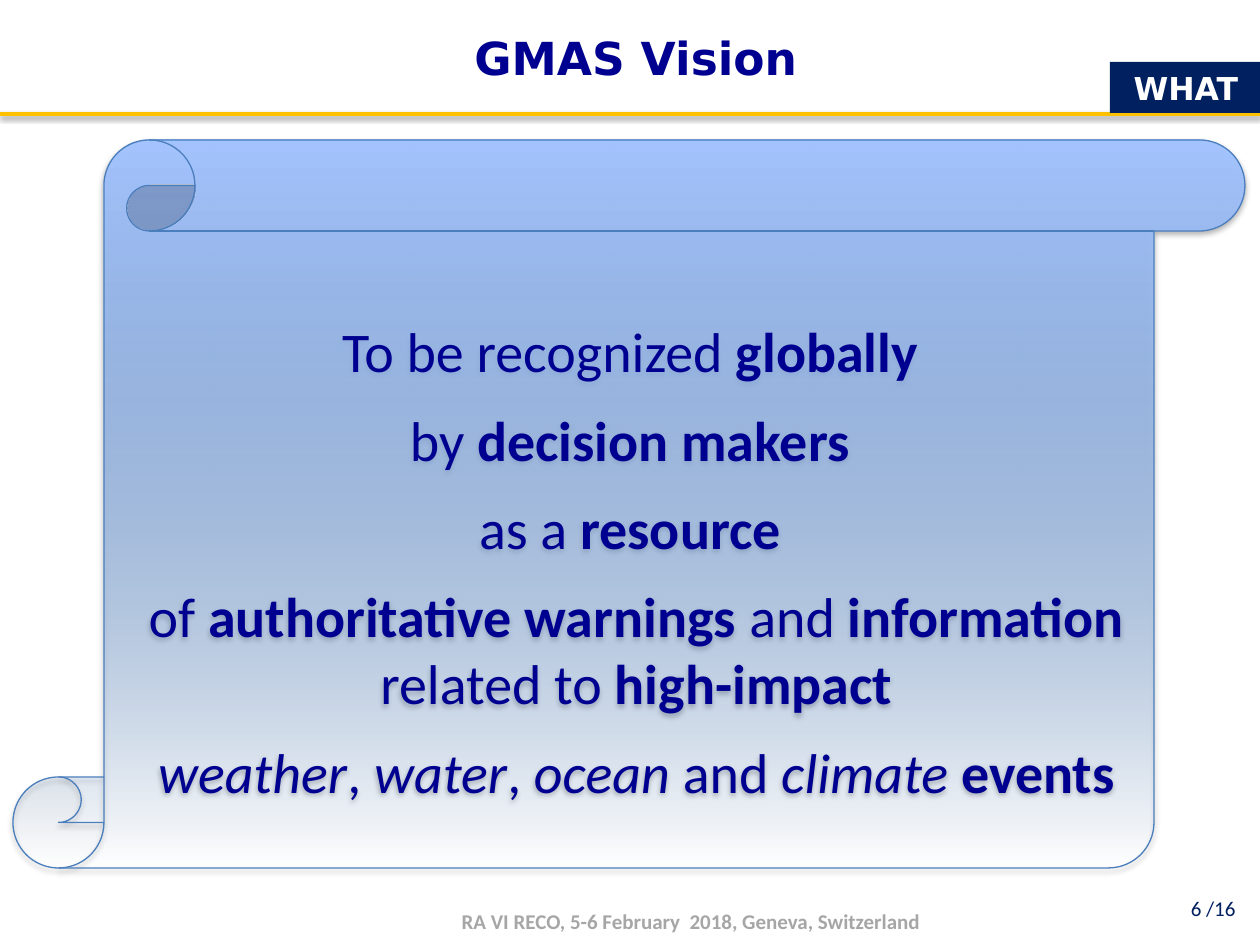
from dataclasses import dataclass

from lxml import etree
from pptx import Presentation
from pptx import util as u
from pptx.dml.color import RGBColor
from pptx.enum import shapes, text
from pptx.oxml.ns import qn


@dataclass(frozen=True)
class Theme:
    navy: str = "000090"
    dark: str = "002060"
    gold: str = "FFC000"
    grey: str = "A6A6A6"
    white: str = "FFFFFF"
    scroll_top: str = "A4C4FF"
    scroll_bottom: str = "3F80CE"
    scroll_edge: str = "4B7EBC"
    heading_font: str = "DejaVu Sans"
    body_font: str = "Calibri"
    title_size: float = 26
    vision_size: float = 32
    tag_size: float = 18
    footer_size: float = 12


THEME = Theme()
PLAIN, BOLD, ITALIC = "plain", "bold", "italic"
VISION = [
    [("To be recognized ", PLAIN), ("globally ", BOLD)],
    [("by ", PLAIN), ("decision makers ", BOLD)],
    [("as a ", PLAIN), ("resource ", BOLD)],
    [("of ", PLAIN), ("authoritative warnings ", BOLD), ("and ", PLAIN),
     ("information", BOLD), (" related to ", PLAIN), ("high-impact", BOLD)],
    [("weather", ITALIC), (", ", PLAIN), ("water", ITALIC), (", ", PLAIN),
     ("ocean", ITALIC), (" and ", PLAIN), ("climate ", ITALIC), ("events", BOLD)],
]


def px(length):
    return u.Emu(round(length * 914400 / 126))


def rgb(value):
    return RGBColor.from_string(value)


def style_font(font, name, size, color, bold=None):
    font.name, font.size, font.bold = name, u.Pt(size), bold
    font.color.rgb = rgb(color)


def write_line(frame, words, name, size, color, bold=None, align=text.PP_ALIGN.CENTER):
    frame.word_wrap = True
    frame.vertical_anchor = text.MSO_ANCHOR.MIDDLE
    para = frame.paragraphs[0]
    para.text, para.alignment = words, align
    style_font(para.font, name, size, color, bold)


def add_label(page, at, *args, **kwargs):
    box = page.shapes.add_textbox(*map(px, at))
    write_line(box.text_frame, *args, **kwargs)


def add_shadow(shape, opacity, blur, distance):
    """Give the shape a black shadow that falls straight down; lengths in points."""
    properties = shape._element.spPr
    effects = properties.find(qn("a:effectLst"))
    if effects is None:
        effects = etree.SubElement(properties, qn("a:effectLst"))
    shadow = etree.SubElement(
        effects, qn("a:outerShdw"), blurRad=str(u.Pt(blur)), dist=str(u.Pt(distance)),
        dir="5400000", algn="ctr", rotWithShape="0")
    color = etree.SubElement(shadow, qn("a:srgbClr"), val="000000")
    etree.SubElement(color, qn("a:alpha"), val=str(opacity * 1000))


def add_rule(page):
    rule = page.shapes.add_connector(
        shapes.MSO_CONNECTOR.STRAIGHT, 0, px(114), px(1260), px(114))
    rule.line.color.rgb = rgb(THEME.gold)
    rule.line.width = u.Pt(2)
    add_shadow(rule, 38, 3.1, 1.6)


def add_tag(page):
    tag = page.shapes.add_shape(
        shapes.MSO_SHAPE.RECTANGLE, *map(px, (1110, 62, 152, 51)))
    tag.shadow.inherit = False
    tag.fill.solid()
    tag.fill.fore_color.rgb = rgb(THEME.dark)
    tag.line.fill.background()
    write_line(tag.text_frame, "WHAT", THEME.heading_font, THEME.tag_size,
               THEME.white, bold=True)


def fade_fill(shape):
    """Fill from the solid top colour to a fully transparent bottom."""
    shape.fill.gradient()
    shape.fill.gradient_angle = 90
    bottom, top = shape.fill.gradient_stops
    bottom.color.rgb, top.color.rgb = rgb(THEME.scroll_bottom), rgb(THEME.scroll_top)
    color = next(shape._element.spPr.iter(qn("a:srgbClr")))
    etree.SubElement(color, qn("a:alpha"), val="0")


def add_scroll(page):
    scroll = page.shapes.add_shape(
        shapes.MSO_SHAPE.VERTICAL_SCROLL, *map(px, (13, 140, 1232, 728)))
    scroll.shadow.inherit = False
    fade_fill(scroll)
    scroll.line.color.rgb = rgb(THEME.scroll_edge)
    scroll.line.width = u.Pt(0.75)
    add_shadow(scroll, 35, 3.1, 1.8)

    frame = scroll.text_frame
    frame.word_wrap = True
    frame.vertical_anchor = text.MSO_ANCHOR.MIDDLE
    frame.margin_top = px(74)
    for index, line in enumerate(VISION):
        para = frame.add_paragraph() if index else frame.paragraphs[0]
        para.alignment = text.PP_ALIGN.CENTER
        para.space_before = u.Pt(12 if index else 0)
        properties = para._p.get_or_add_pPr()
        properties.set("marL", str(px(15)))
        properties.set("indent", "0")
        style_font(para.font, THEME.body_font, THEME.vision_size, THEME.navy)
        for words, style in line:
            span = para.add_run()
            span.text = words
            span.font.bold = style == BOLD
            span.font.italic = style == ITALIC


def main():
    deck = Presentation()
    deck.slide_width, deck.slide_height = px(1260), px(945)
    page = deck.slides.add_slide(deck.slide_layouts[6])
    add_label(page, (102, 19, 1068, 76), "GMAS Vision", THEME.heading_font,
              THEME.title_size, THEME.navy, bold=True)
    add_rule(page)
    add_scroll(page)
    add_label(page, (1172, 883, 76, 50), "6 /16", THEME.body_font,
              THEME.footer_size, THEME.dark, align=text.PP_ALIGN.RIGHT)
    add_tag(page)
    add_label(page, (321, 900, 740, 43),
              "RA VI RECO, 5-6 February  2018, Geneva, Switzerland",
              THEME.body_font, THEME.footer_size, THEME.grey, bold=True)
    deck.save("out.pptx")


if __name__ == "__main__":
    main()
